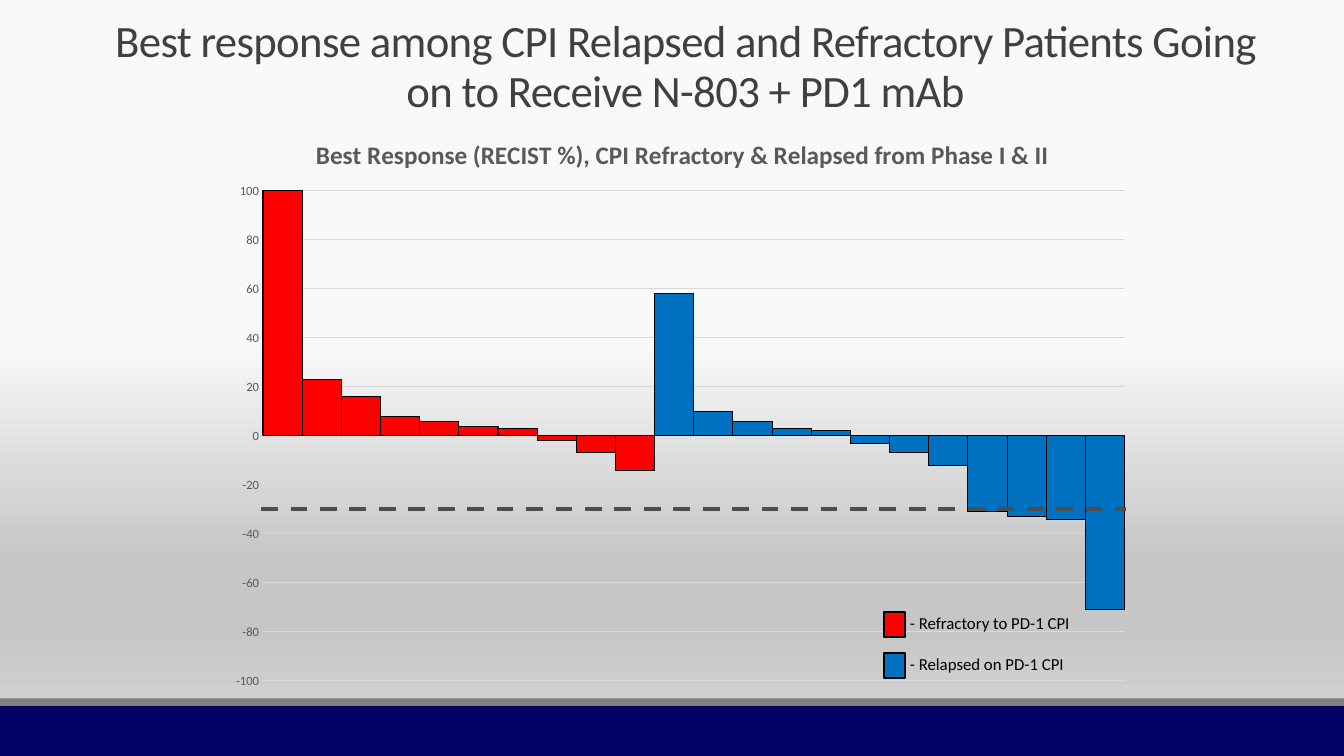
from lxml import etree
from pptx import Presentation
from pptx import util as u
from pptx.chart.data import CategoryChartData
from pptx.dml.color import RGBColor
from pptx.enum import chart as ch, dml, shapes, text
from pptx.oxml import parse_xml
from pptx.oxml.ns import nsdecls, qn

RED, BLUE, BLACK, GREY = "FF0000", "0070C0", "000000", "595959"


def paint(target, colour):
    """Give a fill a solid colour."""
    target.solid()
    target.fore_color.rgb = RGBColor.from_string(colour)


def set_layout(element, x, y, w=None, h=None):
    """Fix the place of a chart title or plot area, in fractions of the chart."""
    for old in element.findall(qn("c:layout")):
        element.remove(old)
    target = '<c:layoutTarget val="inner"/>' if w else ""
    parts = {"xMode": "edge", "yMode": "edge", "x": x, "y": y, "w": w, "h": h}
    tags = "".join(f'<c:{k} val="{v}"/>' for k, v in parts.items() if v is not None)
    layout = parse_xml(f'<c:layout {nsdecls("c")}><c:manualLayout>{target}{tags}'
                       '</c:manualLayout></c:layout>')
    # A title holds its text before the layout
    element.insert(0 if w else 1, layout)


deck = Presentation()
deck.slide_width, deck.slide_height = u.Cm(33.87), u.Cm(19.05)
page = deck.slides.add_slide(deck.slide_layouts[5])

# Background gradient, top to bottom
background = page.background.fill
background.gradient()
background.gradient_angle = 270
stops = page.element.find(".//" + qn("a:gsLst"))
for stop in list(stops):
    stops.remove(stop)
for percent, colour in [(45, "F9F9F9"), (74, "C6C6C6"), (83, "C6C6C6"), (100, "D9D9D9")]:
    stop = etree.SubElement(stops, qn("a:gs"), pos=str(percent * 1000))
    etree.SubElement(stop, qn("a:srgbClr"), val=colour)

# Footer bands
for top, height, colour in [(17.78, 1.27, "000066"), (17.6, 0.18, "808080")]:
    band = page.shapes.add_shape(shapes.MSO_SHAPE.RECTANGLE, 0, u.Cm(top),
                                 deck.slide_width, u.Cm(height))
    band.shadow.inherit = False
    paint(band.fill, colour)
    band.line.fill.background()

# Title
title = page.shapes.title
title.left, title.top, title.width, title.height = u.Cm(2.06), u.Cm(0.3), u.Cm(30.43), u.Cm(2.74)
frame = title.text_frame
frame.text = ("Best response among CPI Relapsed and Refractory Patients Going "
              "on to Receive N-803 + PD1 mAb")
frame.word_wrap = True
frame.auto_size = text.MSO_AUTO_SIZE.NONE
frame.vertical_anchor = text.MSO_ANCHOR.MIDDLE
para = frame.paragraphs[0]
para.alignment = text.PP_ALIGN.CENTER
para.line_spacing = u.Pt(36)
span = para.runs[0]
span.font.name, span.font.size = "Calibri", u.Pt(32)
span.font.color.rgb = RGBColor.from_string("404040")
span.font._element.set("spc", "-50")

# Waterfall chart: refractory patients first, then relapsed ones
refractory = [100, 23, 16, 8, 6, 4, 3, -2, -7, -14]
relapsed = [58, 10, 6, 3, 2, -3, -7, -12, -31, -33, -34, -71]
responses = refractory + relapsed
data = CategoryChartData()
data.categories = [str(n + 1) for n in range(len(responses))]
data.add_series("Series 1", responses)
# The frame is wide enough to keep the heading on one line
chart = page.shapes.add_chart(ch.XL_CHART_TYPE.COLUMN_CLUSTERED, u.Cm(4.92), u.Cm(2.9),
                              u.Cm(24.4), u.Cm(14.7), data).chart
chart.has_legend = False
chart.font.name, chart.font.size = "Calibri", u.Pt(10)
chart.font.color.rgb = RGBColor.from_string(BLACK)

chart.has_title = True
heading = chart.chart_title
heading.include_in_layout = False
heading.text_frame.text = "Best Response (RECIST %), CPI Refractory & Relapsed from Phase I & II"
font = heading.text_frame.paragraphs[0].runs[0].font
font.name, font.size, font.bold = "Calibri", u.Pt(18), True
font.color.rgb = RGBColor.from_string(GREY)
set_layout(heading._element, 0.12, 0.03)
set_layout(chart._chartSpace.chart.plotArea, 0.07, 0.13, 0.89, 0.84)

plot = chart.plots[0]
plot.gap_width, plot.overlap = 0, -27
plot.vary_by_categories = False
series = plot.series[0]
series.invert_if_negative = False
bars = [series] + [series.points[n] for n in range(len(refractory), len(responses))]
for bar in bars:
    paint(bar.format.fill, RED if bar is series else BLUE)
    paint(bar.format.line.fill, BLACK)
    bar.format.line.width = u.Pt(0.75)

# Axes
chart.category_axis.visible = False
axis = chart.value_axis
axis.minimum_scale, axis.maximum_scale, axis.major_unit = -100, 100, 20
axis.major_tick_mark = axis.minor_tick_mark = ch.XL_TICK_MARK.NONE
axis.format.line.fill.background()
axis.tick_labels.font.name, axis.tick_labels.font.size = "Calibri", u.Pt(9)
axis.tick_labels.font.color.rgb = RGBColor.from_string(GREY)
axis.has_major_gridlines = True
grid = axis.major_gridlines.format.line
paint(grid.fill, "D9D9D9")
grid.width = u.Pt(0.75)

# Response threshold at -30 %
threshold = page.shapes.add_connector(shapes.MSO_CONNECTOR.STRAIGHT, u.Cm(6.58), u.Cm(12.83),
                                      u.Cm(28.37), u.Cm(12.83))
paint(threshold.line.fill, "4D4D4D")
threshold.line.width = u.Pt(3)
threshold.line.dash_style = dml.MSO_LINE.DASH
etree.SubElement(threshold._element.spPr, qn("a:effectLst"))

# Legend
for top, colour, label in [(15.42, RED, "- Refractory to PD-1 CPI"),
                           (16.46, BLUE, "- Relapsed on PD-1 CPI")]:
    swatch = page.shapes.add_shape(shapes.MSO_SHAPE.RECTANGLE, u.Cm(22.28), u.Cm(top),
                                   u.Cm(0.53), u.Cm(0.63))
    swatch.shadow.inherit = False
    paint(swatch.fill, colour)
    paint(swatch.line.fill, BLACK)
    swatch.line.width = u.Pt(1.25)

    box = page.shapes.add_textbox(u.Cm(22.68), u.Cm(top - 0.11), u.Cm(5.5), u.Cm(0.77))
    box.text_frame.word_wrap = True
    box.text_frame.auto_size = text.MSO_AUTO_SIZE.SHAPE_TO_FIT_TEXT
    box.text_frame.text = label
    font = box.text_frame.paragraphs[0].runs[0].font
    font.name, font.size = "Calibri", u.Pt(12)
    font.color.rgb = RGBColor.from_string(BLACK)

deck.save("out.pptx")
